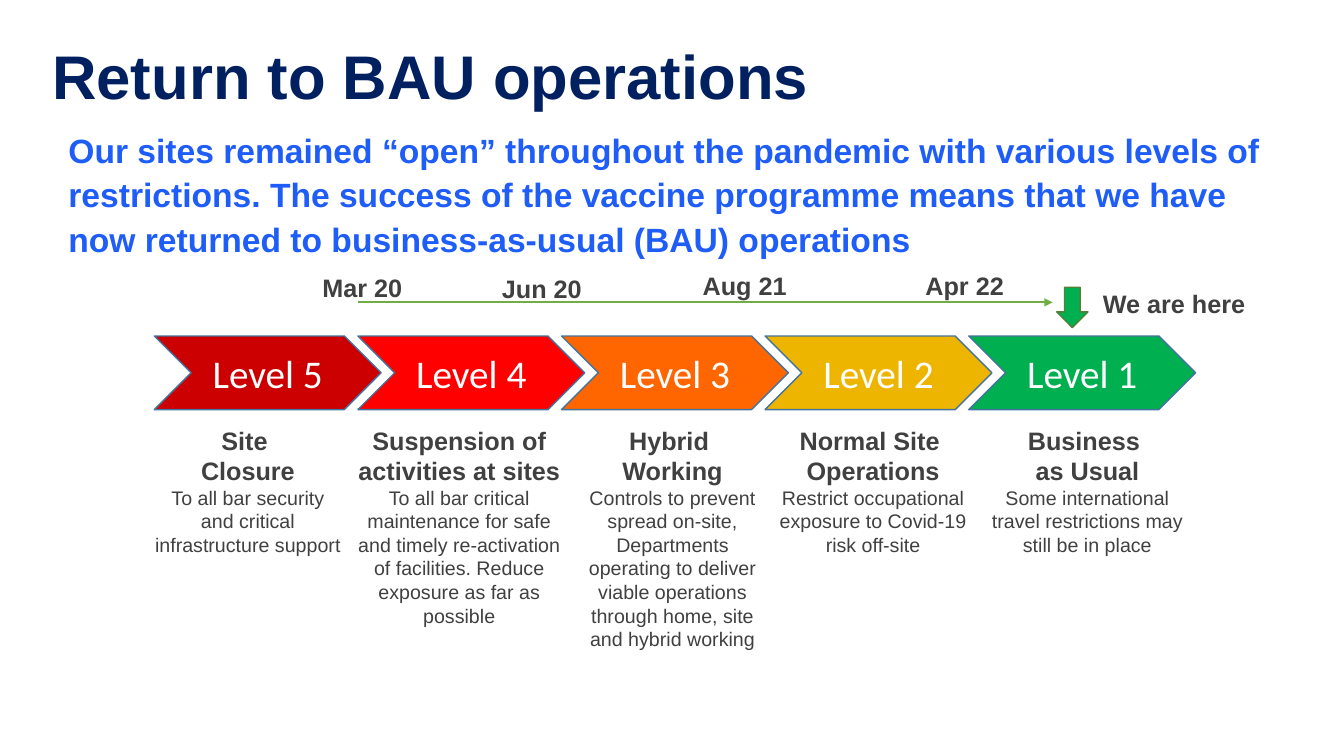
"""Builds the slide on the return to business-as-usual operations."""
from lxml.etree import SubElement
from pptx import Presentation
from pptx.dml.color import RGBColor
from pptx.enum.shapes import MSO_CONNECTOR, MSO_SHAPE
from pptx.enum.text import MSO_ANCHOR, MSO_AUTO_SIZE, PP_ALIGN
from pptx.oxml.ns import qn
from pptx.util import Inches, Pt

WIDTH, HEIGHT = Inches(13.33), Inches(7.5)
NAVY = RGBColor(0x00, 0x20, 0x60)
BLUE = RGBColor(0x1E, 0x5D, 0xF8)
GREY = RGBColor(0x40, 0x40, 0x40)
WHITE = RGBColor(0xFF, 0xFF, 0xFF)
DARK_RED = RGBColor(0xCC, 0x00, 0x00)
RED = RGBColor(0xFF, 0x00, 0x00)
ORANGE = RGBColor(0xFF, 0x66, 0x00)
AMBER = RGBColor(0xEE, 0xB5, 0x00)
GREEN = RGBColor(0x00, 0xB0, 0x50)
STEEL = RGBColor(0x43, 0x73, 0x9E)
MOSS = RGBColor(0x53, 0x80, 0x35)
LEAF = RGBColor(0x70, 0xAD, 0x47)

TITLE = "Return to BAU operations"
SUMMARY = (
    "Our sites remained “open” throughout the pandemic with various levels of "
    "restrictions. The success of the vaccine programme means that we have now "
    "returned to business-as-usual (BAU) operations"
)
CHEVRON_LEFT, CHEVRON_STEP = 11.48, 15.15
LEVELS = [
    (DARK_RED, "Level 5", (10.65, 15.6, 18.8), ["Site ", "Closure"],
     "To all bar security and critical infrastructure support"),
    (RED, "Level 4", (25.73, 16.88, 28.27), ["Suspension of activities at sites"],
     "To all bar critical maintenance for safe and timely re-activation of "
     "facilities. Reduce exposure as far as possible"),
    (ORANGE, "Level 3", (42.24, 15.6, 31.47), ["Hybrid ", "Working"],
     "Controls to prevent spread on-site, Departments operating to deliver "
     "viable operations through home, site and hybrid working"),
    (AMBER, "Level 2", (56.94, 16.05, 18.8), ["Normal Site ", "Operations"],
     "Restrict occupational exposure to Covid-19 risk off-site"),
    (GREEN, "Level 1", (72.92, 15.98, 18.8), ["Business ", "as Usual"],
     "Some international travel restrictions may still be in place"),
]
LABELS = [
    ("Mar 20", 23.26, 35.33, 7.58),
    ("Jun 20", 36.61, 35.47, 7.58),
    ("Aug 21", 51.54, 35.07, 9.08),
    ("Apr 22", 68.12, 35.07, 7.58),
    ("We are here", 81.32, 37.47, 13.05),
]


def area(left, top, width, height):
    """Turn percentages of the slide into lengths."""
    return (int(WIDTH * left / 100), int(HEIGHT * top / 100),
            int(WIDTH * width / 100), int(HEIGHT * height / 100))


def style(p, size, color, bold=False, name="Arial"):
    """Set the font of a paragraph."""
    font = p.font
    font.name, font.size, font.bold = name, Pt(size), bold
    font.color.rgb = color


def add_text(s, box, lines, align=PP_ALIGN.LEFT):
    """Add a text box of (text, size, colour, bold) lines."""
    tf = s.shapes.add_textbox(*area(*box)).text_frame
    tf.word_wrap = True
    tf.auto_size = MSO_AUTO_SIZE.SHAPE_TO_FIT_TEXT
    for i, (text, size, color, bold) in enumerate(lines):
        p = tf.add_paragraph() if i else tf.paragraphs[0]
        p.text, p.alignment = text, align
        style(p, size, color, bold)
    return tf


def add_shape(s, kind, box, fill, line):
    """Add a filled and outlined preset shape."""
    sp = s.shapes.add_shape(kind, *area(*box))
    sp.shadow.inherit = False
    sp.fill.solid()
    sp.fill.fore_color.rgb = fill
    sp.line.color.rgb = line
    sp.line.width = Pt(1)
    return sp


def add_level(s, index, color, label, column, heading, detail):
    """Add the chevron of one level and the text below it."""
    left = CHEVRON_LEFT + index * CHEVRON_STEP
    sp = add_shape(s, MSO_SHAPE.CHEVRON, (left, 44.45, 16.88, 9.73), color, STEEL)
    tf = sp.text_frame
    tf.vertical_anchor = MSO_ANCHOR.MIDDLE
    p = tf.paragraphs[0]
    p.text, p.alignment = label, PP_ALIGN.CENTER
    style(p, 28, WHITE, name="Calibri")
    left, width, height = column
    lines = [(text, 18, GREY, True) for text in heading]
    lines.append((detail, 14, GREY, False))
    add_text(s, (left, 55.6, width, height), lines, PP_ALIGN.CENTER)


def add_timeline(s, left, right, top):
    """Add the horizontal arrow under the dates."""
    x, y, length, _ = area(left, top, right - left, 0)
    line = s.shapes.add_connector(MSO_CONNECTOR.STRAIGHT, x, y, x + length, y)
    line.line.color.rgb = LEAF
    line.line.width = Pt(1.5)
    SubElement(line.line._get_or_add_ln(), qn("a:tailEnd"), type="triangle")
    SubElement(line._element.spPr, qn("a:effectLst"))


def main():
    """Build and save the slide."""
    prs = Presentation()
    prs.slide_width, prs.slide_height = WIDTH, HEIGHT
    s = prs.slides.add_slide(prs.slide_layouts[6])
    tf = add_text(s, (4.35, 16, 91, 18.67), [(SUMMARY, 24, BLUE, True)])
    tf.paragraphs[0].line_spacing = 1.1
    tf.paragraphs[0].space_after = Pt(12)
    tf = add_text(s, (3.15, 6.27, 92.05, 9.2), [(TITLE, 44, NAVY, True)])
    tf.paragraphs[0].line_spacing = 0.8
    for index, level in enumerate(LEVELS):
        add_level(s, index, *level)
    add_shape(s, MSO_SHAPE.DOWN_ARROW, (78.62, 38, 2.33, 5.33), GREEN, MOSS)
    add_timeline(s, 26.63, 78.32, 40)
    for text, left, top, width in LABELS:
        add_text(s, (left, top, width, 5.33), [(text, 18, GREY, True)])
    prs.save("out.pptx")


if __name__ == "__main__":
    main()
